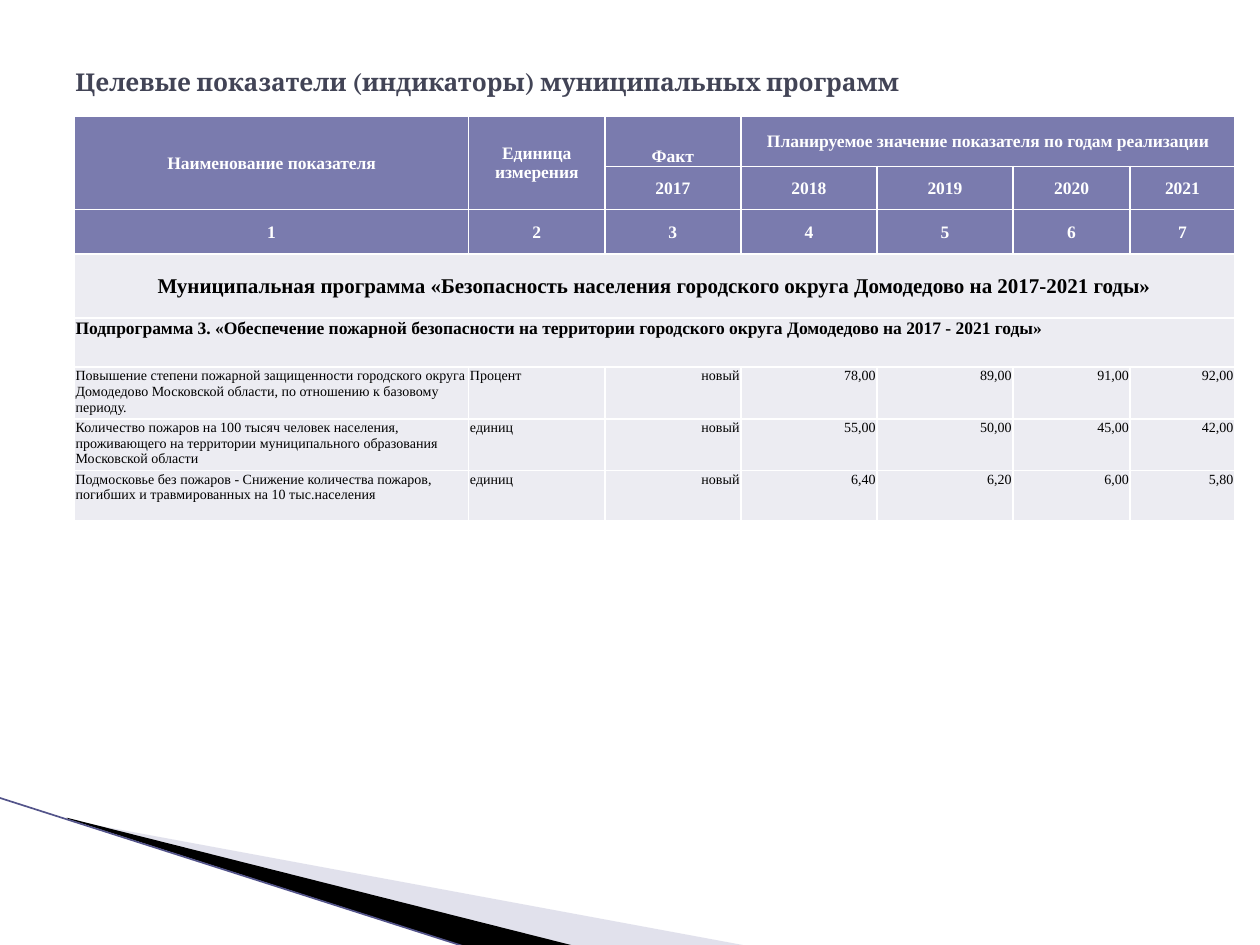
from dataclasses import dataclass

import pptx
import pptx.dml.color
import pptx.enum.shapes
import pptx.enum.text
import pptx.oxml
import pptx.oxml.ns
import pptx.util
from lxml import etree

Inches = pptx.util.Inches
Align = pptx.enum.text.PP_ALIGN
Anchor = pptx.enum.text.MSO_ANCHOR


@dataclass(frozen=True)
class Theme:
    title_font: str = "Cambria"
    table_font: str = "Times New Roman"
    title_color: str = "424456"
    header_fill: str = "7A7BAE"
    body_fill: str = "ECECF2"
    white: str = "FFFFFF"
    black: str = "000000"
    pale_wedge: str = "B6B6D1"
    edge: str = "53548A"
    title_size: float = 14
    program_size: float = 12
    header_size: float = 10
    body_size: float = 8


THEME = Theme()


@dataclass(frozen=True)
class Header:
    row: int
    column: int
    text: str
    rows: int = 1
    columns: int = 1
    anchor: Anchor = Anchor.MIDDLE


@dataclass(frozen=True)
class Indicator:
    name: str
    unit: str
    values: tuple[str, ...]


@dataclass(frozen=True)
class Wedge:
    points: tuple[tuple[float, float], ...]
    color: str
    opacity: int = 100


COLUMN_WIDTHS = (3.13, 1.08, 1.08, 1.08, 1.08, 0.93, 0.83)
ROW_HEIGHTS = (0.4, 0.31, 0.35, 0.51, 0.39, 0.41, 0.41, 0.4)
FIRST_YEAR = 2017

HEADERS = [
    Header(0, 0, "Наименование показателя", rows=2),
    Header(0, 1, "Единица измерения", rows=2),
    Header(0, 2, "Факт", anchor=Anchor.BOTTOM),
    Header(0, 3, "Планируемое значение показателя по годам реализации", columns=4),
    *(Header(1, 2 + i, str(FIRST_YEAR + i)) for i in range(5)),
    *(Header(2, i, str(i + 1)) for i in range(7)),
]
PROGRAM = ("Муниципальная программа «Безопасность населения городского округа "
           "Домодедово на 2017-2021 годы»")
SUBPROGRAM = ("Подпрограмма 3. «Обеспечение пожарной безопасности на территории "
              "городского округа Домодедово на 2017 - 2021 годы»")
INDICATORS = [
    Indicator("Повышение степени пожарной защищенности городского округа Домодедово "
              "Московской области, по отношению к базовому периоду.", "Процент",
              ("новый", "78,00", "89,00", "91,00", "92,00")),
    Indicator("Количество пожаров на 100 тысяч человек населения, проживающего на "
              "территории муниципального образования Московской области", "единиц",
              ("новый", "55,00", "50,00", "45,00", "42,00")),
    Indicator("Подмосковье без пожаров - Снижение количества пожаров, погибших и "
              "травмированных на 10 тыс.населения", "единиц",
              ("новый", "6,40", "6,20", "6,00", "5,80")),
]
WEDGES = [
    Wedge(((0.55, 6.51), (5.95, 7.51), (4.56, 7.51), (0.55, 6.5)), THEME.pale_wedge, 40),
    Wedge(((0.53, 6.49), (4.57, 7.51), (3.72, 7.52), (0.54, 6.5)), THEME.black),
]


def rgb(color: str) -> pptx.dml.color.RGBColor:
    return pptx.dml.color.RGBColor.from_string(color)


def write(frame, text: str, *, size: float, color: str = THEME.black,
          font: str = THEME.table_font, bold: bool = False, align: Align = Align.LEFT) -> None:
    """Put one formatted paragraph in a text frame."""
    paragraph = frame.paragraphs[0]
    paragraph.alignment = align
    run = paragraph.add_run()
    run.text = text
    run.font.name = font
    run.font.size = pptx.util.Pt(size)
    run.font.bold = bold
    run.font.color.rgb = rgb(color)


def draw_wedge(slide, wedge: Wedge) -> None:
    start, *corners = [(Inches(x), Inches(y)) for x, y in wedge.points]
    builder = slide.shapes.build_freeform(*start)
    builder.add_line_segments(corners, close=True)
    shape = builder.convert_to_shape()
    shape.shadow.inherit = False
    shape.line.fill.background()
    shape.fill.solid()
    shape.fill.fore_color.rgb = rgb(wedge.color)
    if wedge.opacity < 100:
        color = shape.fill._xPr.find(".//" + pptx.oxml.ns.qn("a:srgbClr"))
        etree.SubElement(color, pptx.oxml.ns.qn("a:alpha"), val=str(wedge.opacity * 1000))


def draw_edge(slide) -> None:
    edge = slide.shapes.add_connector(
        pptx.enum.shapes.MSO_CONNECTOR.STRAIGHT,
        Inches(-0.01), Inches(6.33), Inches(3.71), Inches(7.52))
    edge.line.color.rgb = rgb(THEME.edge)
    edge.line.width = pptx.util.Pt(0.95)
    etree.SubElement(edge._element.spPr, pptx.oxml.ns.qn("a:effectLst"))


def draw_title(slide) -> None:
    title = slide.shapes.add_textbox(Inches(0.5), Inches(0.3), Inches(9), Inches(0.69))
    title.text_frame.word_wrap = True
    title.text_frame.vertical_anchor = Anchor.MIDDLE
    write(title.text_frame, "Целевые показатели (индикаторы) муниципальных программ",
          size=THEME.title_size, color=THEME.title_color, font=THEME.title_font, bold=True)


def style_cell(cell, fill: str) -> None:
    """Set the fill, narrow margins and white borders of a cell."""
    cell.margin_left = cell.margin_right = cell.margin_top = Inches(0.01)
    cell.margin_bottom = 0
    properties = cell._tc.get_or_add_tcPr()
    for side in ("lnL", "lnR", "lnT", "lnB"):
        border = etree.SubElement(properties, pptx.oxml.ns.qn(f"a:{side}"),
                                  w=str(pptx.util.Pt(1)))
        solid = etree.SubElement(border, pptx.oxml.ns.qn("a:solidFill"))
        etree.SubElement(solid, pptx.oxml.ns.qn("a:srgbClr"), val=THEME.white)
    cell.fill.solid()
    cell.fill.fore_color.rgb = rgb(fill)


def draw_table(slide) -> None:
    table = slide.shapes.add_table(
        len(ROW_HEIGHTS), len(COLUMN_WIDTHS), Inches(0.59), Inches(0.92),
        Inches(sum(COLUMN_WIDTHS)), Inches(sum(ROW_HEIGHTS))).table
    for column, width in zip(table.columns, COLUMN_WIDTHS):
        column.width = Inches(width)
    for index, (row, height) in enumerate(zip(table.rows, ROW_HEIGHTS)):
        row.height = Inches(height)
        for cell in row.cells:
            style_cell(cell, THEME.header_fill if index < 3 else THEME.body_fill)

    # Column headings
    for header in HEADERS:
        cell = table.cell(header.row, header.column)
        if header.rows * header.columns > 1:
            cell.merge(table.cell(header.row + header.rows - 1,
                                  header.column + header.columns - 1))
        cell.vertical_anchor = header.anchor
        write(cell.text_frame, header.text, size=THEME.header_size,
              color=THEME.white, bold=True, align=Align.CENTER)

    # Programme and subprogramme bands
    bands = ((3, PROGRAM, THEME.program_size, Align.CENTER, Anchor.MIDDLE),
             (4, SUBPROGRAM, THEME.header_size, Align.LEFT, Anchor.TOP))
    for row, text, size, align, anchor in bands:
        cell = table.cell(row, 0)
        cell.merge(table.cell(row, len(COLUMN_WIDTHS) - 1))
        cell.vertical_anchor = anchor
        write(cell.text_frame, text, size=size, bold=True, align=align)

    # Indicator rows
    for row, indicator in enumerate(INDICATORS, start=5):
        texts = (indicator.name, indicator.unit, *indicator.values)
        for column, text in enumerate(texts):
            write(table.cell(row, column).text_frame, text, size=THEME.body_size,
                  align=Align.LEFT if column < 2 else Align.RIGHT)

    # Small type in covered cells keeps the rows from growing
    for cell in filter(lambda cell: cell.is_spanned, table.iter_cells()):
        etree.SubElement(cell.text_frame.paragraphs[0]._p, pptx.oxml.ns.qn("a:endParaRPr"),
                         sz=str(THEME.body_size * 100))


def main() -> None:
    presentation = pptx.Presentation()
    presentation.slide_width, presentation.slide_height = Inches(10), Inches(7.5)
    slide = presentation.slides.add_slide(presentation.slide_layouts[6])
    for wedge in WEDGES:
        draw_wedge(slide, wedge)
    draw_edge(slide)
    draw_title(slide)
    draw_table(slide)
    presentation.save("out.pptx")


if __name__ == "__main__":
    main()
